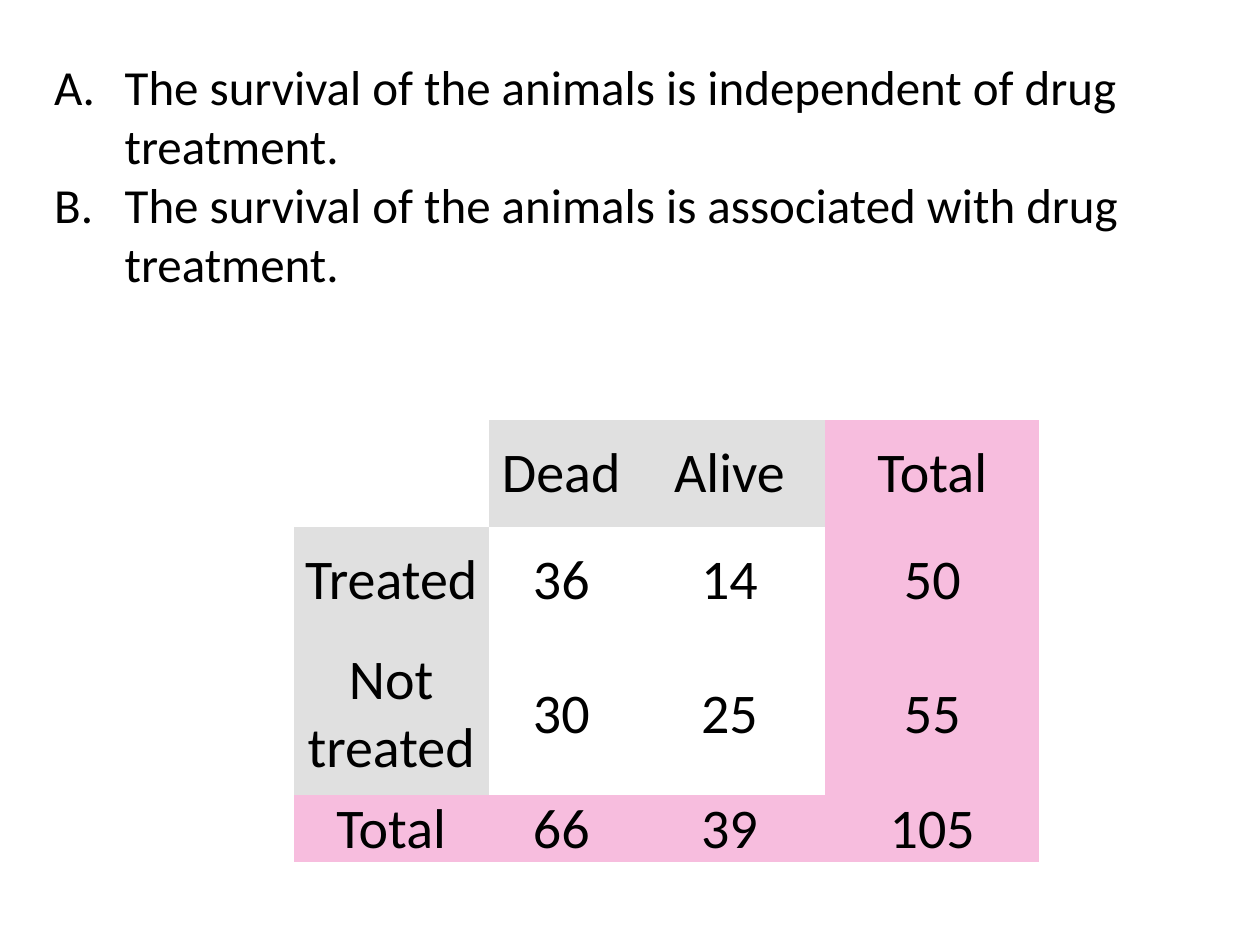
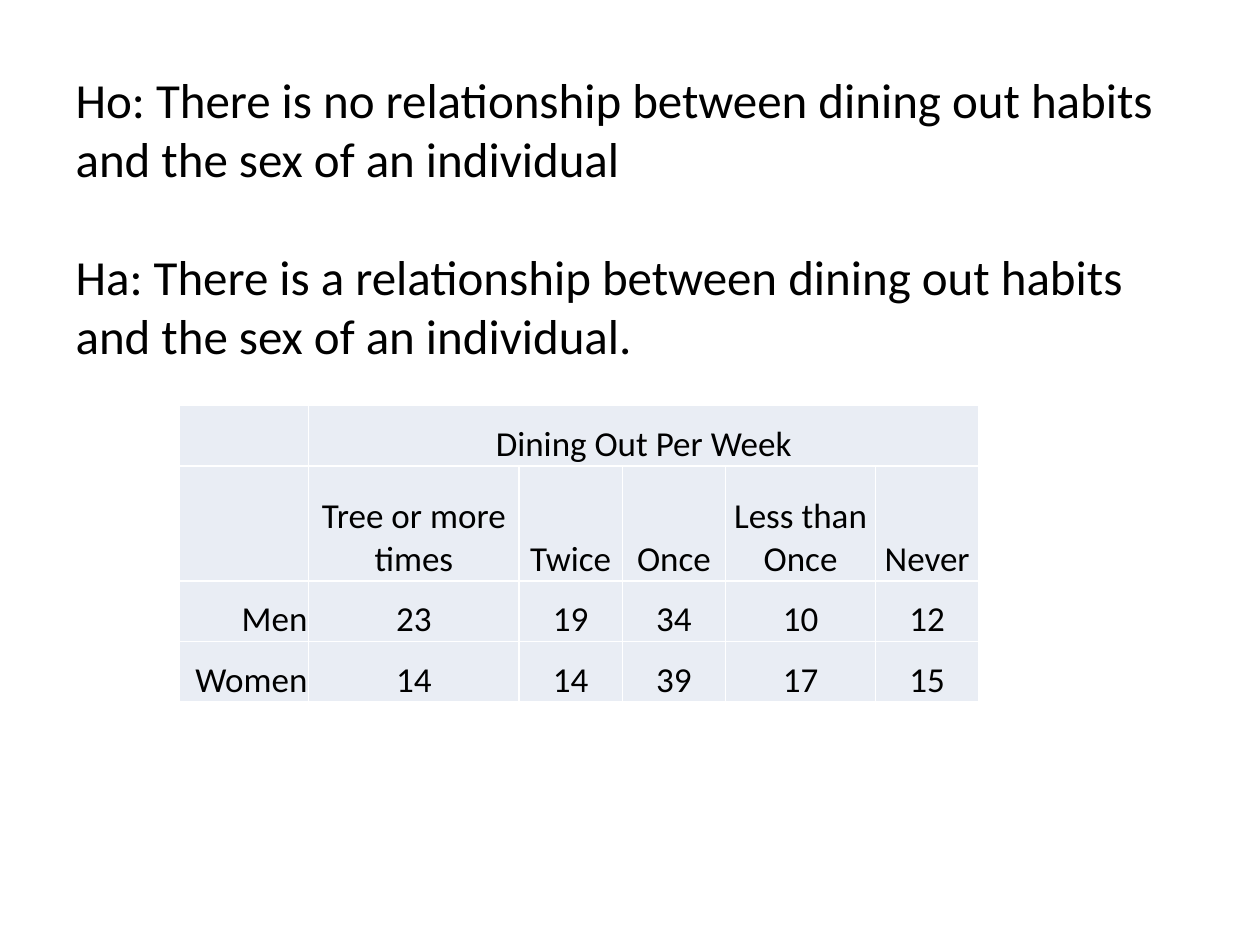
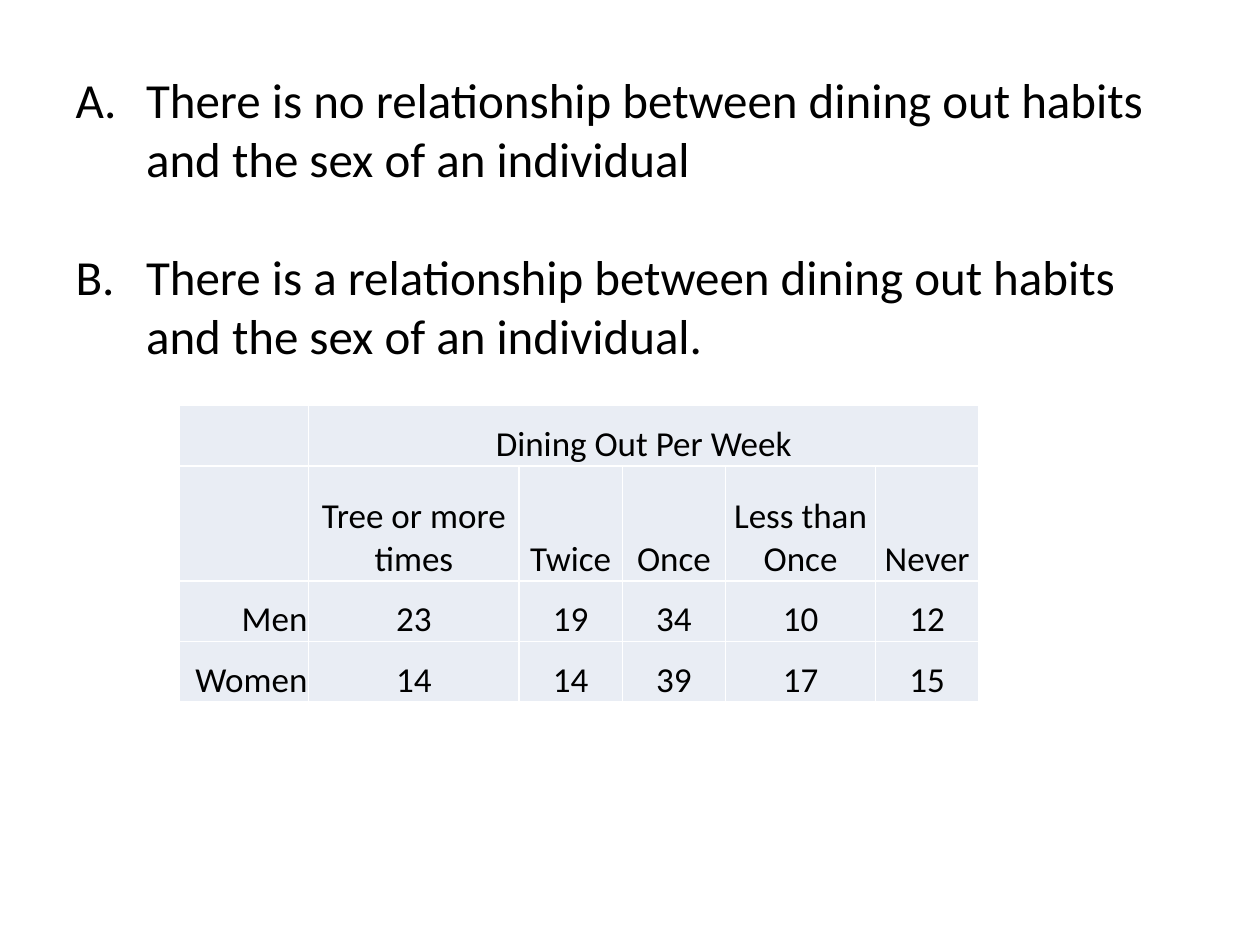
from dataclasses import dataclass

from lxml import etree
from pptx import Presentation
from pptx import util as u
from pptx.dml import color
from pptx.enum import text
from pptx.oxml import ns


@dataclass(frozen=True)
class Theme:
    """Colours, font and type sizes of the deck."""
    font: str = "Calibri"
    ink: str = "000000"
    grey: str = "E0E0E0"
    pink: str = "F7BDDE"
    pale: str = "E9EDF4"
    rule: str = "FFFFFF"
    body: int = 28
    large: int = 32
    small: int = 20
    gap: int = 34
    plain: str = "{2D5ABB26-0587-4C30-8999-92F81FD0307C}"


class Deck:
    """Holds the theme and the current slide."""

    def __init__(self, theme):
        """Start an empty deck."""
        self.theme = theme
        self.prs = Presentation()
        self.prs.slide_width, self.prs.slide_height = u.Inches(10), u.Inches(7.5)

    def page(self):
        """Add a slide that has only a body."""
        self.slide = self.prs.slides.add_slide(self.prs.slide_layouts[1])
        title = self.slide.shapes.title.element
        title.getparent().remove(title)

    def style(self, para, size):
        """Set the font of a paragraph."""
        font = para.font
        font.name, font.size = self.theme.font, u.Pt(size)
        font.color.rgb = color.RGBColor.from_string(self.theme.ink)

    def body(self, left, top, lines, letters=True, gap=0):
        """Fill the body with lines, lettered or plain."""
        box = self.slide.placeholders[1]
        box.left, box.top = u.Inches(left), u.Inches(top)
        box.width, box.height = u.Inches(8.92), u.Inches(2.93)
        frame = box.text_frame
        frame.text = "\n".join(lines)
        frame.auto_size = text.MSO_AUTO_SIZE.SHAPE_TO_FIT_TEXT
        hang = u.Inches(0.56) if letters else 0
        for row, para in enumerate(frame.paragraphs):
            props = para._p.get_or_add_pPr()
            props.set("marL", str(hang))
            props.set("indent", str(-hang))
            if letters:
                etree.SubElement(props, ns.qn("a:buFont"), typeface="+mj-lt")
                etree.SubElement(props, ns.qn("a:buAutoNum"), type="alphaUcPeriod")
            else:
                etree.SubElement(props, ns.qn("a:buNone"))
            para.space_before = u.Pt(gap if row else 0)
            self.style(para, self.theme.body)

    def border(self, cell):
        """Draw thin rules on the four sides of a cell."""
        props = cell._tc.get_or_add_tcPr()
        for spot, side in enumerate("LRTB"):
            line = etree.Element(ns.qn(f"a:ln{side}"), w=str(u.Pt(1)))
            fill = etree.SubElement(line, ns.qn("a:solidFill"))
            etree.SubElement(fill, ns.qn("a:srgbClr"), val=self.theme.rule)
            props.insert(spot, line)

    def table(self, left, top, wide, high, rows, size, fill, anchor, pad=0, ruled=False):
        """Add a table whose cell fills come from a rule."""
        frame = self.slide.shapes.add_table(
            len(high), len(wide), u.Inches(left), u.Inches(top),
            u.Inches(sum(wide)), u.Inches(sum(high)))
        grid = frame.table
        grid.first_row = grid.horz_banding = False
        grid._tbl.tblPr.find(ns.qn("a:tableStyleId")).text = self.theme.plain
        for col, width in zip(grid.columns, wide):
            col.width = u.Inches(width)
        for row, height in zip(grid.rows, high):
            row.height = u.Inches(height)
        for r, words in enumerate(rows):
            for c, word in enumerate(words):
                cell = grid.cell(r, c)
                cell.text = word
                cell.vertical_anchor = anchor
                cell.margin_left = cell.margin_right = cell.margin_top = u.Inches(pad)
                cell.margin_bottom = 0
                tint = fill(r, c)
                if tint:
                    cell.fill.solid()
                    cell.fill.fore_color.rgb = color.RGBColor.from_string(tint)
                if ruled:
                    self.border(cell)
                para = cell.text_frame.paragraphs[0]
                right = ruled and c == 0
                para.alignment = text.PP_ALIGN.RIGHT if right else text.PP_ALIGN.CENTER
                self.style(para, size)
        return grid

    def trial(self):
        """Add the drug trial counts."""
        def tint(row, col):
            """Pick pink for totals and grey for heads."""
            if 3 in (row, col):
                return self.theme.pink
            return self.theme.grey if (row == 0) != (col == 0) else None

        rows = [("", "Dead", "Alive", "Total"),
                ("Treated", "36", "14", "50"),
                ("Not treated", "30", "25", "55"),
                ("Total", "66", "39", "105")]
        self.table(2.33, 3.33, (1.55, 1.15, 1.52, 1.7), (0.85, 0.85, 1.28, 0.43),
                   rows, self.theme.large, tint, text.MSO_ANCHOR.MIDDLE)

    def dining(self):
        """Add the dining survey counts."""
        rows = [("", "Dining Out Per Week", "", "", "", ""),
                ("", "Tree or more times", "Twice", "Once", "Less than Once", "Never"),
                ("Men", "23", "19", "34", "10", "12"),
                ("Women", "14", "14", "39", "17", "15")]
        grid = self.table(1.42, 3.22, (1.03, 1.67, 0.82, 0.82, 1.19, 0.82),
                          (0.48, 0.91, 0.48, 0.48), rows, self.theme.small,
                          lambda row, col: self.theme.pale,
                          text.MSO_ANCHOR.BOTTOM, 0.01, True)
        grid.cell(0, 1).merge(grid.cell(0, 5))


def main():
    """Build the three slides."""
    deck = Deck(Theme())
    deck.page()
    deck.body(0.33, 0.4, [f"The survival of the animals is {link} drug treatment."
                          for link in ("independent of", "associated with")])
    deck.trial()

    claims = ["There is no relationship between dining out habits and the sex of an individual",
              "There is a relationship between dining out habits and the sex of an individual."]
    named = [f"{name}: {claim}" for name, claim in zip(("Ho", "Ha"), claims)]
    for lines, letters in ((named, False), (claims, True)):
        deck.page()
        deck.body(0.5, 0.5, lines, letters, deck.theme.gap)
        deck.dining()
    deck.prs.save("out.pptx")


if __name__ == "__main__":
    main()
